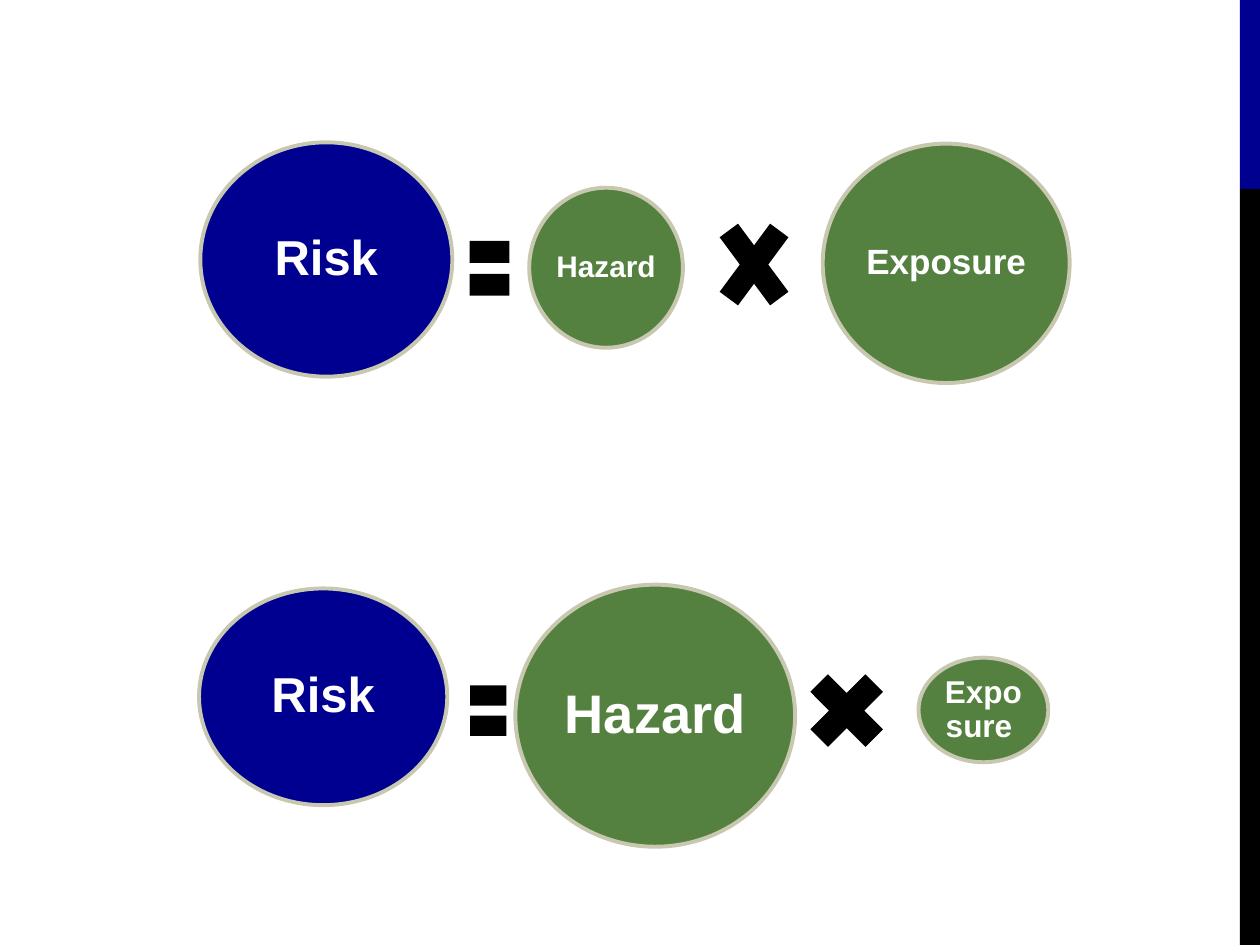
from dataclasses import dataclass

from pptx import Presentation, util as u
from pptx.dml.color import RGBColor
from pptx.enum import shapes, text

SHAPE = shapes.MSO_SHAPE


@dataclass(frozen=True)
class Theme:
    """Colours, font and type sizes of the slide."""
    risk: str = "000090"
    factor: str = "558140"
    outline: str = "C8C8B1"
    ink: str = "000000"
    label: str = "FFFFFF"
    font: str = "Arial"
    result_size: int = 28
    dominant_size: int = 31
    large_size: int = 20
    medium_size: int = 18
    small_size: int = 17


def write(frame, wording, size, color, font, inset=0.03):
    """Write one bold centred label into a text frame."""
    frame.word_wrap = True
    frame.vertical_anchor = text.MSO_ANCHOR.MIDDLE
    frame.margin_left = frame.margin_right = u.Inches(inset)
    frame.margin_top = frame.margin_bottom = u.Inches(inset)
    line = frame.paragraphs[0]
    line.alignment = text.PP_ALIGN.CENTER
    line.line_spacing = 0.9
    run = line.add_run()
    run.text = wording
    run.font.size = u.Pt(size)
    run.font.name = font
    run.font.bold = True
    run.font.color.rgb = RGBColor.from_string(color)


class Board:
    """Draws on one slide, measured on a grid of 100 columns by 75 rows."""

    def __init__(self, deck, theme):
        """Add a blank slide to the deck."""
        self.theme = theme
        self.column = deck.slide_width / 100
        self.row = deck.slide_height / 75
        self.slide = deck.slides.add_slide(deck.slide_layouts[6])
        self.target = self.slide.shapes

    def start_equation(self):
        """Collect the next elements in a new group."""
        self.target = self.slide.shapes.add_group_shape().shapes

    def block(self, kind, area, color):
        """Add a plain filled shape at (left, top, width, height)."""
        left, top, width, height = area
        shape = self.target.add_shape(
            kind, round(left * self.column), round(top * self.row),
            round(width * self.column), round(height * self.row))
        shape.shadow.inherit = False
        shape.fill.solid()
        shape.fill.fore_color.rgb = RGBColor.from_string(color)
        shape.line.fill.background()
        return shape

    def sign(self, kind, area):
        """Add a mathematical sign."""
        self.block(kind, area, self.theme.ink)

    def circle(self, wording, area, color, size, inset=0.03):
        """Add an outlined ellipse with its label."""
        ellipse = self.block(SHAPE.OVAL, area, color)
        ellipse.line.color.rgb = RGBColor.from_string(self.theme.outline)
        ellipse.line.width = u.Pt(2.25)
        write(ellipse.text_frame, wording, size, self.theme.label,
              self.theme.font, inset)


def main():
    """Build the slide with the two risk equations."""
    deck = Presentation()
    deck.slide_width, deck.slide_height = u.Inches(10), u.Inches(7.5)
    theme = Theme()
    board = Board(deck, theme)

    board.block(SHAPE.RECTANGLE, (98.4, 0, 1.6, 15), theme.risk)
    board.block(SHAPE.RECTANGLE, (98.4, 15, 1.6, 60), theme.ink)

    board.start_equation()
    board.circle("Risk", (15.9, 11.3, 20, 18.6), theme.risk, theme.result_size)
    board.sign(SHAPE.MATH_MULTIPLY, (56, 15.8, 7.7, 10.4))
    board.circle("Exposure ", (65.3, 11.4, 19.6, 19), theme.factor, theme.large_size)
    board.sign(SHAPE.MATH_EQUAL, (36.7, 17.6, 4.3, 7.4))
    board.circle("Hazard ", (42, 14.9, 12.2, 12.7), theme.factor, theme.small_size, 0.02)

    board.start_equation()
    board.circle("Risk", (15.8, 46.7, 19.7, 17.2), theme.risk, theme.result_size)
    board.sign(SHAPE.MATH_MULTIPLY, (63, 52.2, 8.4, 8.4))
    board.circle("Exposure ", (72.9, 52.2, 10.3, 8.3), theme.factor, theme.medium_size)
    board.sign(SHAPE.MATH_EQUAL, (36.8, 53, 3.9, 6.8))
    board.circle("Hazard", (40.9, 46.4, 22.2, 20.8), theme.factor, theme.dominant_size)

    deck.save("out.pptx")


if __name__ == "__main__":
    main()
